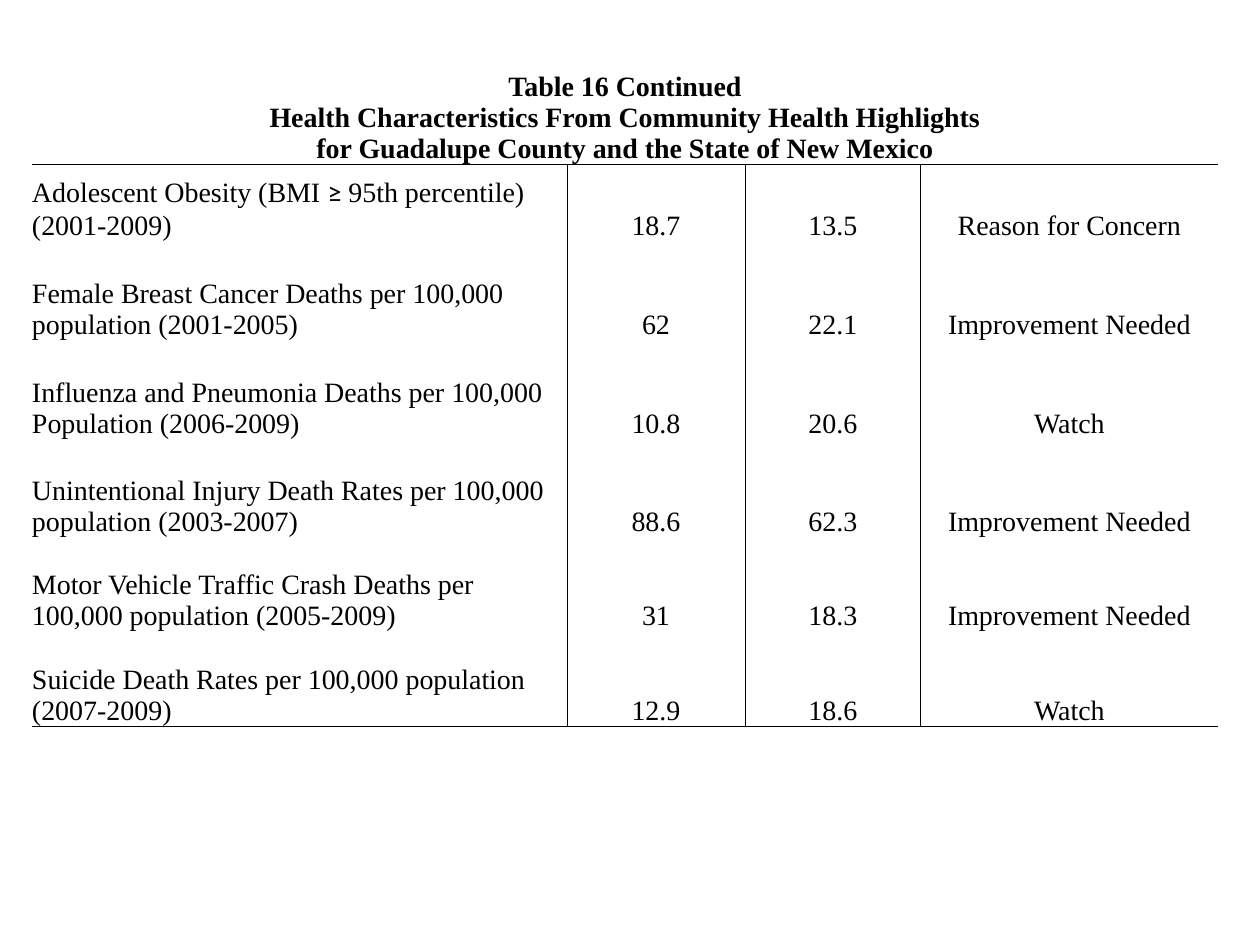
from lxml.etree import SubElement
from pptx import Presentation
from pptx.dml.color import RGBColor
from pptx.enum.text import MSO_ANCHOR, PP_ALIGN
from pptx.oxml.ns import qn
from pptx.util import Emu, Pt

PX = 914400 // 126
INK = "000000"
FONT = "Times New Roman"


def color(code):
    return RGBColor.from_string(code)


def border(cell, side, shown):
    line = SubElement(cell._tc.get_or_add_tcPr(), qn("a:ln" + side), w=str(Pt(0.5)))
    if shown:
        fill = SubElement(line, qn("a:solidFill"))
        SubElement(fill, qn("a:srgbClr"), val=INK)
    else:
        SubElement(line, qn("a:noFill"))


deck = Presentation()
deck.slide_width, deck.slide_height = Emu(1260 * PX), Emu(945 * PX)
slide = deck.slides.add_slide(deck.slide_layouts[6])

# Wording: title lines, then measure, county rate, state rate, status
titles = [
    "Table 16 Continued",
    "Health Characteristics From Community Health Highlights",
    "for Guadalupe County and the State of New Mexico",
]
data = [
    ("Adolescent Obesity (BMI ≥ 95th percentile) (2001-2009)", "18.7", "13.5", "Reason for Concern"),
    ("Female Breast Cancer Deaths per 100,000 population (2001-2005)", "62", "22.1", "Improvement Needed"),
    ("Influenza and Pneumonia Deaths per 100,000 Population (2006-2009)", "10.8", "20.6", "Watch"),
    ("Unintentional Injury Death Rates per 100,000 population (2003-2007)", "88.6", "62.3", "Improvement Needed"),
    ("Motor Vehicle Traffic Crash Deaths per 100,000 population (2005-2009)", "31", "18.3", "Improvement Needed"),
    ("Suicide Death Rates per 100,000 population (2007-2009)", "12.9", "18.6", "Watch"),
]
rows = [(title, "", "", "") for title in titles] + data + [("",) * 4]
first, last = len(titles), len(rows) - 2

# Table grid
widths = [535, 178, 176, 297]
heights = [31, 31, 31, 77, 99, 99, 98, 94, 95, 13]
table = slide.shapes.add_table(
    len(rows), len(widths), Emu(32 * PX), Emu(71 * PX),
    Emu(sum(widths) * PX), Emu(sum(heights) * PX),
).table
table.first_row = table.horz_banding = False
for col, width in zip(table.columns, widths):
    col.width = Emu(width * PX)
for row, height in zip(table.rows, heights):
    row.height = Emu(height * PX)
for r in range(first):
    table.cell(r, 0).merge(table.cell(r, len(widths) - 1))

# Cells
for r, row in enumerate(rows):
    body = first <= r <= last
    for c, text in enumerate(row):
        cell = table.cell(r, c)
        cell.margin_left = cell.margin_right = cell.margin_top = cell.margin_bottom = 0
        cell.vertical_anchor = MSO_ANCHOR.BOTTOM

        # Rules between columns and around the body
        border(cell, "L", body and c > 0)
        border(cell, "R", body and c < len(widths) - 1)
        border(cell, "T", r in (first, last + 1))
        border(cell, "B", r in (first - 1, last))
        cell.fill.background()

        # Text, with the sign in its own font
        para = cell.text_frame.paragraphs[0]
        para.alignment = PP_ALIGN.LEFT if body and c == 0 else PP_ALIGN.CENTER
        para.font.size = Pt(16)
        para.font.bold = r < first
        para.font.color.rgb = color(INK)
        head, sign, tail = text.partition("≥")
        if not sign:
            para.font.name = FONT
        for part in filter(None, (head, sign, tail)):
            run = para.add_run()
            run.text = part
            if sign:
                run.font.name = "Calibri" if part == sign else FONT
        if not text:
            SubElement(para._p, qn("a:endParaRPr"), sz="600")

deck.save("out.pptx")
